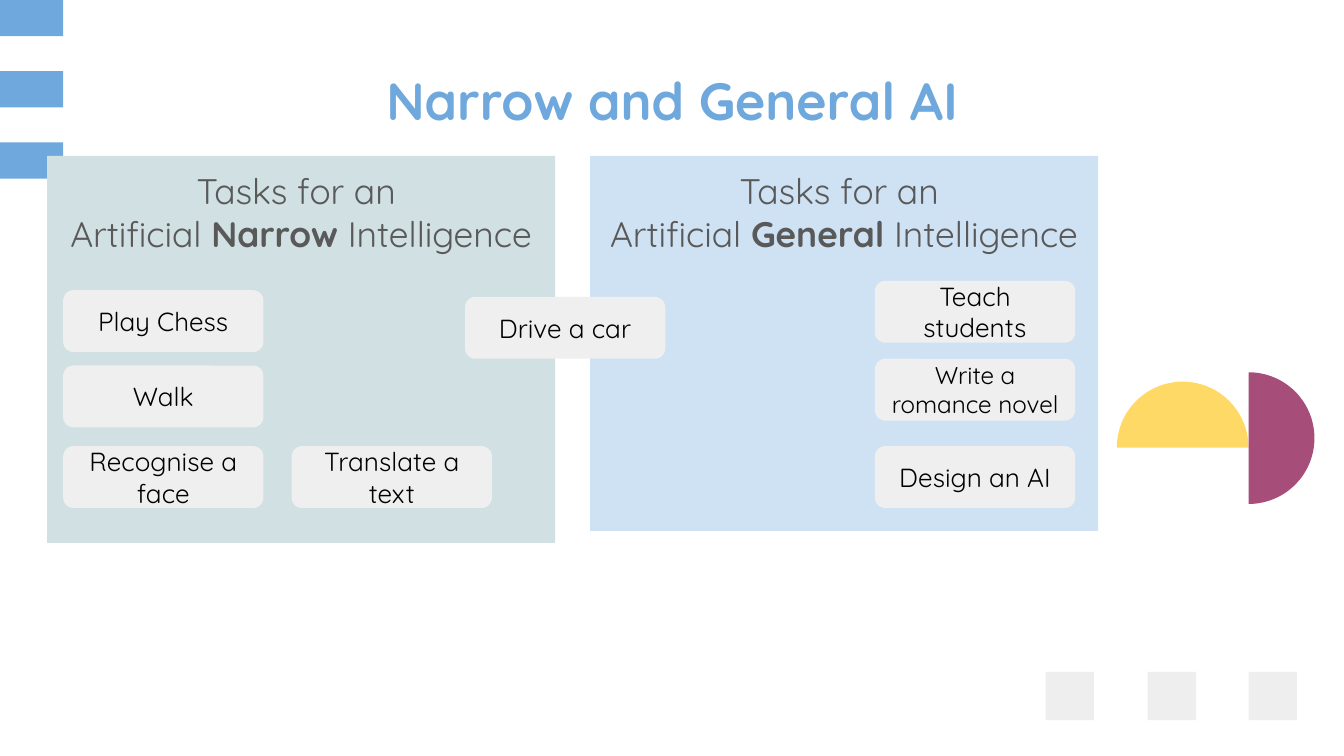
from math import cos, radians, sin

from lxml.etree import SubElement
from pptx import Presentation
from pptx.dml.color import RGBColor
from pptx.enum.shapes import MSO_SHAPE
from pptx.enum.text import MSO_ANCHOR, MSO_AUTO_SIZE, PP_ALIGN
from pptx.oxml.ns import qn
from pptx.util import Inches, Pt

TITLE = "Narrow and General AI"
PANELS = [  # left, height, fill, kind of intelligence
    (0.35, 2.88, "D0E0E3", "Narrow"),
    (4.39, 2.79, "CFE2F3", "General"),
]
CARDS = [  # left, top, text, size
    (0.47, 2.16, "Play Chess", 14),
    (0.47, 2.72, "Walk", 14),
    (0.47, 3.32, "Recognise a face", 14),
    (3.46, 2.21, "Drive a car", 14),
    (6.51, 2.09, "Teach students", 14),
    (2.17, 3.32, "Translate a text", 14),
    (6.51, 3.32, "Design an AI", 14),
    (6.51, 2.67, "Write a romance novel", 13),
]
HALF_DISCS = [  # centre x, centre y, start angle, fill
    (8.8, 3.33, 180, "FFD966"),
    (9.29, 3.26, 270, "A64D79"),
]
SQUARES = [(left, 5, 0.36, 0.36, "EEEEEE") for left in (7.78, 8.54, 9.29)]
BARS = [(0, 0.53 * i, 0.47, 0.27, "6FA8DC") for i in (2, 1, 0)]
RADIUS = 0.49


def color(hex_code):
    return RGBColor.from_string(hex_code)


def paint(shape, fill):
    shape.shadow.inherit = False
    shape.fill.solid()
    shape.fill.fore_color.rgb = color(fill)
    shape.line.fill.background()


def place(shape, left, top, width, height):
    box = {"left": left, "top": top, "width": width, "height": height}
    for name, value in box.items():
        setattr(shape, name, Inches(value))


def prepare_text(shape, anchor):
    """Set frame and paragraph formats; return the first paragraph."""
    frame = shape.text_frame
    frame_format = {"word_wrap": True, "auto_size": MSO_AUTO_SIZE.NONE,
                    "vertical_anchor": anchor}
    for side in ("left", "right", "top", "bottom"):
        frame_format[f"margin_{side}"] = Inches(0.1)
    for name, value in frame_format.items():
        setattr(frame, name, value)
    paragraph = frame.paragraphs[0]
    paragraph.alignment = PP_ALIGN.CENTER
    paragraph.space_before = Pt(0)
    return paragraph


def add_run(paragraph, text, size, hex_code, bold=False):
    run = paragraph.add_run()
    run.text = text
    font_format = {"name": "Quicksand", "size": Pt(size), "bold": bold}
    for name, value in font_format.items():
        setattr(run.font, name, value)
    run.font.color.rgb = color(hex_code)


def remove_bullet(paragraph):
    properties = paragraph._p.get_or_add_pPr()
    properties.set("marL", "0")
    properties.set("indent", "0")
    SubElement(properties, qn("a:buNone"))


def add_half_disc(shapes, center_x, center_y, start, fill):
    points = [(Inches(center_x + RADIUS * cos(radians(angle))),
               Inches(center_y + RADIUS * sin(radians(angle))))
              for angle in range(start, start + 181, 3)]
    builder = shapes.build_freeform(*points[0])
    builder.add_line_segments(points[1:], close=True)
    paint(builder.convert_to_shape(), fill)


def main():
    presentation = Presentation()
    presentation.slide_width = Inches(10)
    presentation.slide_height = Inches(10) * 9 // 16
    slide = presentation.slides.add_slide(presentation.slide_layouts[3])
    shapes = slide.shapes
    title, *bodies = list(slide.placeholders)

    for *box, fill in SQUARES + BARS:
        rectangle = shapes.add_shape(MSO_SHAPE.RECTANGLE, *map(Inches, box))
        paint(rectangle, fill)
    for half_disc in HALF_DISCS:
        add_half_disc(shapes, *half_disc)

    # The decoration lies behind the placeholders.
    for placeholder in (title, *bodies):
        placeholder.element.getparent().append(placeholder.element)

    place(title, 0.78, 0.59, 8.44, 0.3)
    add_run(prepare_text(title, MSO_ANCHOR.MIDDLE), TITLE, 28, "6FA8DC", True)

    for body, (left, height, fill, kind) in zip(bodies, PANELS):
        place(body, left, 1.16, 3.78, height)
        paint(body, fill)
        paragraph = prepare_text(body, MSO_ANCHOR.TOP)
        paragraph.space_after = Pt(16)
        remove_bullet(paragraph)
        add_run(paragraph, "Tasks for an ", 19, "595959")
        paragraph.add_line_break()
        add_run(paragraph, "Artificial ", 19, "595959")
        add_run(paragraph, kind, 19, "595959", True)
        add_run(paragraph, " Intelligence", 19, "595959")

    for left, top, text, size in CARDS:
        card = shapes.add_shape(MSO_SHAPE.ROUNDED_RECTANGLE, Inches(left),
                                Inches(top), Inches(1.49), Inches(0.46))
        paint(card, "EFEFEF")
        add_run(prepare_text(card, MSO_ANCHOR.MIDDLE), text, size, "000000")

    presentation.save("out.pptx")


if __name__ == "__main__":
    main()
